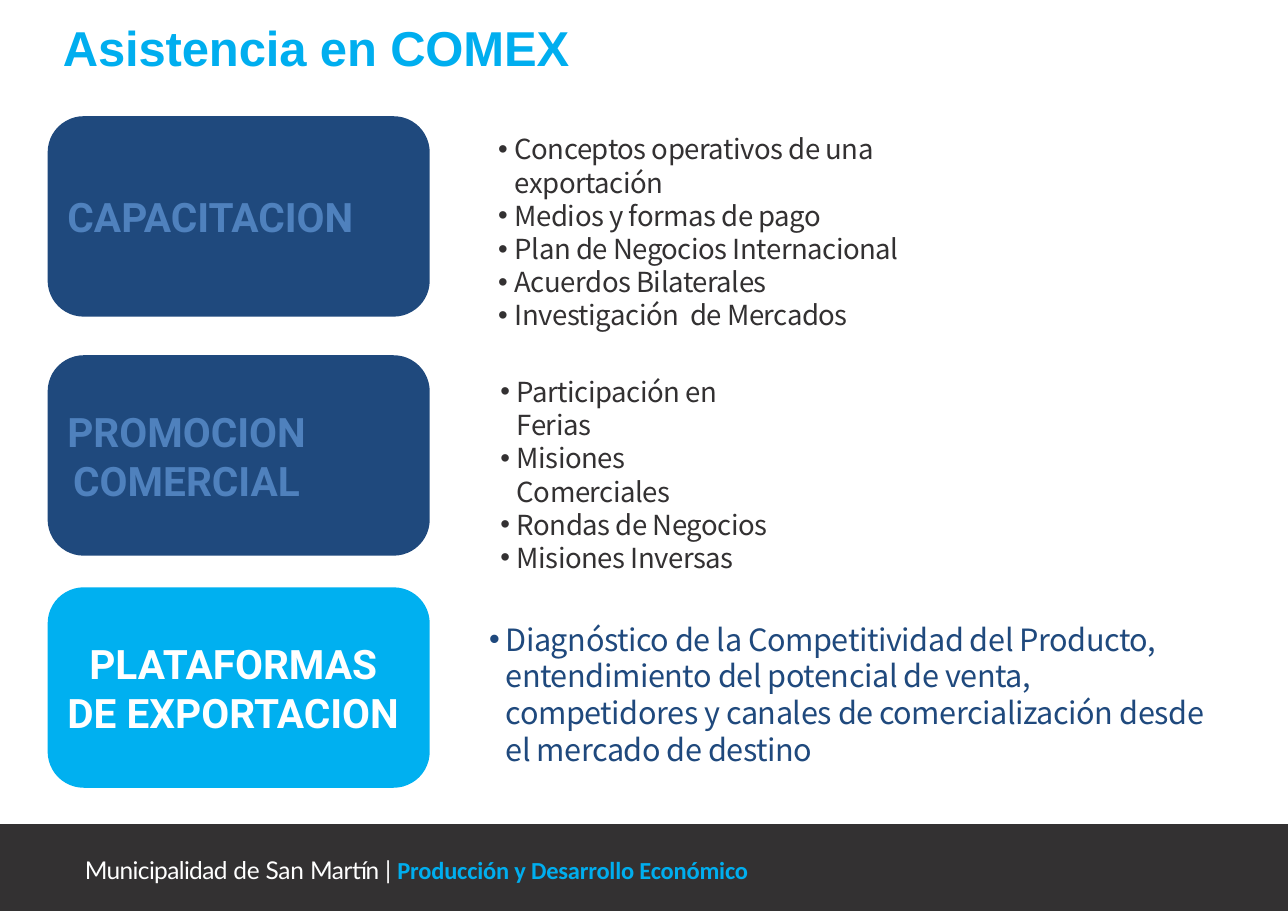
"""Build the COMEX assistance slide with three service cards and their details."""
import lxml.etree
import pptx
import pptx.dml.color
import pptx.enum.shapes
import pptx.enum.text
import pptx.oxml.ns
import pptx.util

Cm = pptx.util.Cm
Pt = pptx.util.Pt
COLORS = {"cyan": "00AEEF", "dark": "333132", "navy": "1F497D",
          "muted": "4F81BD", "active": "00B0F0", "white": "FFFFFF"}
SECTIONS = [
    {"card": (2.68, "navy", "muted", 1.3), "title": "CAPACITACION",
     "list": (11.46, 3.05, 11.33, 3.84, 18, "dark"),
     "items": ["Conceptos operativos de una exportación",
               "Medios y formas de pago",
               "Plan de Negocios Internacional",
               "Acuerdos Bilaterales",
               "Investigación  de Mercados"]},
    {"card": (8.19, "navy", "muted", 2.4), "title": "PROMOCION\vCOMERCIAL",
     "list": (11.51, 8.64, 6.4, 3.84, 18, "dark"),
     "items": ["Participación en Ferias", "Misiones Comerciales",
               "Rondas de Negocios", "Misiones Inversas"]},
    {"card": (13.54, "active", "white", 0.25),
     "title": "PLATAFORMAS\vDE EXPORTACION",
     "list": (11.25, 14.3, 16.76, 2.57, 20, "navy"),
     "items": ["Diagnóstico de la Competitividad del Producto, entendimiento "
               "del potencial de venta, competidores y canales de "
               "comercialización desde el mercado de destino"]},
]
FOOTER_RUNS = [
    ("Municipalidad ", "Lato", "white", False, -0.4),
    ("de San ", "Lato", "white", False, -0.1),
    ("Martín ", "Lato", "white", False, -0.3),
    ("| ", "Lato", "white", False, 0),
    ("Producción y Desarrollo Económico", "Calibri", "cyan", True, -0.1),
]


def rgb(name):
    return pptx.dml.color.RGBColor.from_string(COLORS[name])


def format_run(run, font_name, size, color, bold=False, tracking=0):
    run.font.name = font_name
    run.font.size = Pt(size)
    run.font.color.rgb = rgb(color)
    run.font.bold = bold
    run._r.get_or_add_rPr().set("spc", str(round(tracking * 100)))


def set_margins(text_frame, right=0):
    text_frame.margin_left = text_frame.margin_top = text_frame.margin_bottom = 0
    text_frame.margin_right = Cm(right)


def add_filled_shape(slide, kind, left, top, width, height, color):
    shape = slide.shapes.add_shape(kind, Cm(left), Cm(top), Cm(width), Cm(height))
    shape.shadow.inherit = False
    shape.fill.solid()
    shape.fill.fore_color.rgb = rgb(color)
    shape.line.fill.background()
    return shape


def add_text_box(slide, left, top, width, height):
    shape = slide.shapes.add_textbox(Cm(left), Cm(top), Cm(width), Cm(height))
    shape.text_frame.word_wrap = True
    set_margins(shape.text_frame)
    return shape.text_frame


def add_card(slide, title, top, fill, font_color, right_margin):
    shape = add_filled_shape(slide, pptx.enum.shapes.MSO_SHAPE.ROUNDED_RECTANGLE,
                             1.1, top, 8.81, 4.62, fill)
    shape.adjustments[0] = 0.18
    text_frame = shape.text_frame
    text_frame.word_wrap = False
    text_frame.vertical_anchor = pptx.enum.text.MSO_ANCHOR.MIDDLE
    set_margins(text_frame, right_margin)
    text_frame.text = title
    paragraph = text_frame.paragraphs[0]
    paragraph.alignment = pptx.enum.text.PP_ALIGN.CENTER
    for run in paragraph.runs:
        format_run(run, "Roboto", 26.5, font_color, bold=True)


def add_bullet(paragraph):
    properties = paragraph._p.get_or_add_pPr()
    properties.set("marL", str(Cm(0.41)))
    properties.set("indent", str(Cm(-0.38)))
    for tag, key, value in (("a:buFont", "typeface", "Arial"),
                            ("a:buChar", "char", "•")):
        lxml.etree.SubElement(properties, pptx.oxml.ns.qn(tag)).set(key, value)


def add_bullet_list(slide, items, left, top, width, height, size, color):
    text_frame = add_text_box(slide, left, top, width, height)
    text_frame.text = "\n".join(items)
    for paragraph in text_frame.paragraphs:
        paragraph.line_spacing = Pt(size * 1.205)
        add_bullet(paragraph)
        format_run(paragraph.runs[0], "Noto Sans CJK KR", size, color, tracking=-0.3)


def add_title(slide):
    paragraph = add_text_box(slide, 1.45, 0.41, 27.4, 1.37).paragraphs[0]
    paragraph.text = "Asistencia en COMEX"
    format_run(paragraph.runs[0], "Arial", 32, "cyan", bold=True, tracking=-0.1)


def add_footer(slide):
    add_filled_shape(slide, pptx.enum.shapes.MSO_SHAPE.RECTANGLE,
                     0, 19, 29.7, 2, "dark")
    paragraph = add_text_box(slide, 1.96, 19.71, 18.2, 0.69).paragraphs[0]
    for text, font_name, color, bold, tracking in FOOTER_RUNS:
        run = paragraph.add_run()
        run.text = text
        format_run(run, font_name, 16, color, bold, tracking)


def main():
    presentation = pptx.Presentation()
    presentation.slide_width = Cm(29.7)
    presentation.slide_height = Cm(21)
    slide = presentation.slides.add_slide(presentation.slide_layouts[6])
    add_title(slide)
    for section in SECTIONS:
        add_card(slide, section["title"], *section["card"])
        add_bullet_list(slide, section["items"], *section["list"])
    add_footer(slide)
    presentation.save("out.pptx")


if __name__ == "__main__":
    main()
